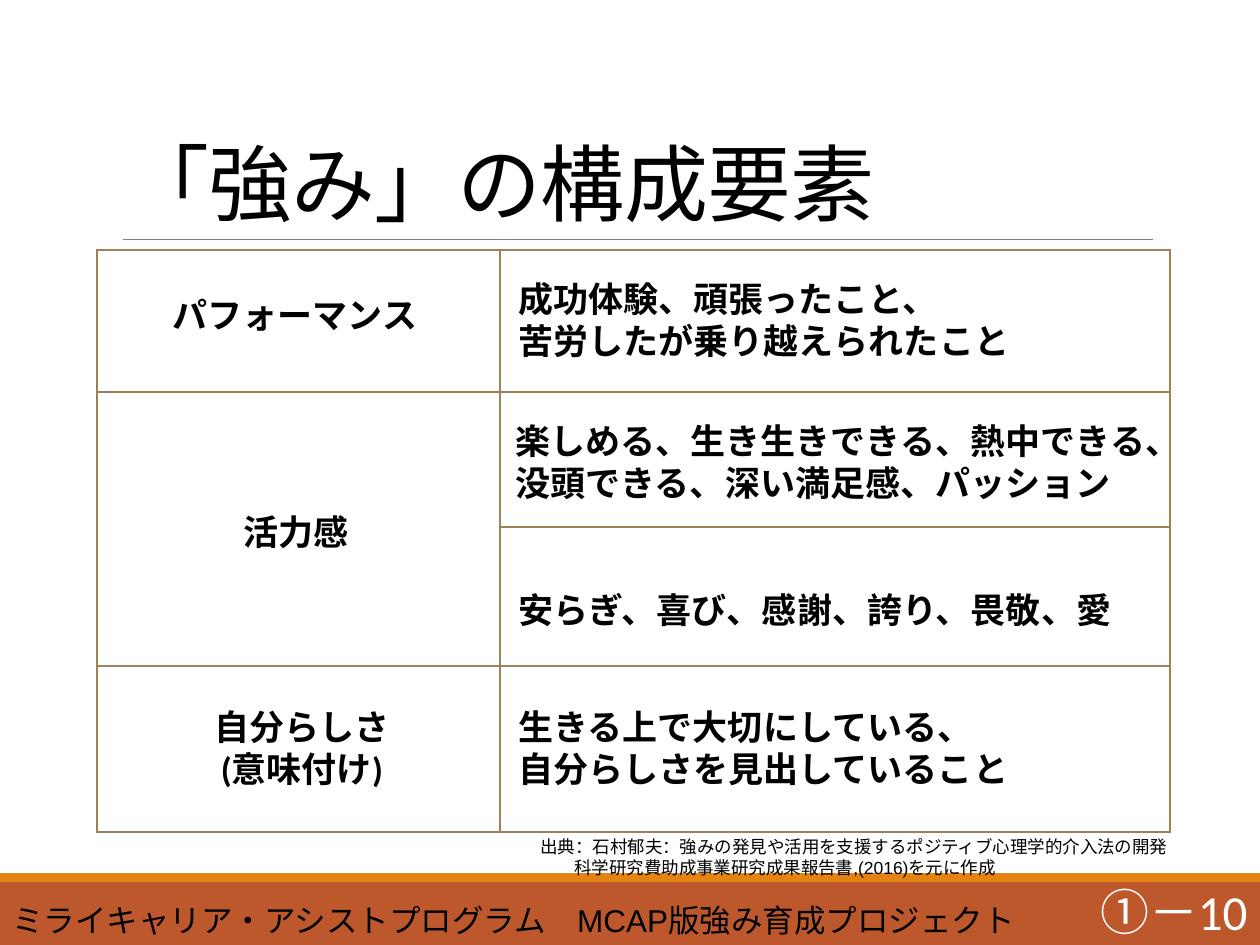
import dataclasses

import pptx
import pptx.dml.color
import pptx.enum.shapes
import pptx.enum.text
import pptx.oxml.ns
import pptx.util
from lxml import etree

RGBColor = pptx.dml.color.RGBColor
PP_ALIGN = pptx.enum.text.PP_ALIGN
MSO_ANCHOR = pptx.enum.text.MSO_ANCHOR
qn = pptx.oxml.ns.qn

BLACK = RGBColor(0x00, 0x00, 0x00)
WHITE = RGBColor(0xFF, 0xFF, 0xFF)
RUST = RGBColor(0xBD, 0x58, 0x2C)
ORANGE = RGBColor(0xE4, 0x83, 0x12)
GRAY = RGBColor(0x80, 0x80, 0x80)
BORDER = RGBColor(0x9B, 0x83, 0x57)

PX_PER_INCH = 126
COLUMNS = [403, 670]
ROWS = [142, 135, 139, 166]


@dataclasses.dataclass
class Label:
    x: int
    y: int
    w: int
    h: int
    lines: list[str]
    size: int = 20
    font: str = "Calibri"
    color: RGBColor = BLACK
    bold: bool = True
    align: PP_ALIGN = PP_ALIGN.LEFT
    anchor: MSO_ANCHOR = MSO_ANCHOR.TOP


LABELS = [
    Label(1058, 877, 202, 68, ["①－10"], size=28, color=WHITE, bold=False,
          align=PP_ALIGN.RIGHT, anchor=MSO_ANCHOR.MIDDLE),
    Label(147, 287, 296, 55, ["パフォーマンス"], align=PP_ALIGN.CENTER),
    Label(190, 504, 212, 55, ["活力感"], align=PP_ALIGN.CENTER),
    Label(503, 413, 673, 97,
          ["楽しめる、生き生きできる、熱中できる、没頭できる、深い満足感、パッション"]),
    Label(506, 582, 667, 55, ["安らぎ、喜び、感謝、誇り、畏敬、愛"]),
    Label(154, 699, 296, 97, ["自分らしさ", "(意味付け)"], align=PP_ALIGN.CENTER),
    Label(506, 699, 620, 97, ["生きる上で大切にしている、", "自分らしさを見出していること"]),
    Label(506, 271, 549, 97, ["成功体験、頑張ったこと、", "苦労したが乗り越えられたこと"]),
    Label(0, 895, 1052, 50, ["ミライキャリア・アシストプログラム　MCAP版強み育成プロジェクト"],
          size=18, font="Arial", bold=False),
]
CITATION = Label(
    528, 830, 672, 93,
    ["出典：石村郁夫：強みの発見や活用を支援するポジティブ心理学的介入法の開発",
     "科学研究費助成事業研究成果報告書,(2016)を元に作成"],
    size=10, font="Arial", bold=False)


def px(n: int) -> pptx.util.Emu:
    return pptx.util.Emu(round(n * 914400 / PX_PER_INCH))


def format_run(r, size: int, font: str, color: RGBColor, bold: bool) -> None:
    r.font.size = pptx.util.Pt(size)
    r.font.name = font
    r.font.color.rgb = color
    r.font.bold = bold


def add_band(s, y: int, h: int, color: RGBColor) -> None:
    sp = s.shapes.add_shape(pptx.enum.shapes.MSO_SHAPE.RECTANGLE, 0, px(y), px(1260), px(h))
    sp.shadow.inherit = False
    sp.fill.solid()
    sp.fill.fore_color.rgb = color
    sp.line.fill.background()


def add_rule(s, x1: int, x2: int, y: int) -> None:
    line = s.shapes.add_connector(
        pptx.enum.shapes.MSO_CONNECTOR.STRAIGHT, px(x1), px(y), px(x2), px(y))
    line.line.color.rgb = GRAY
    line.line.width = pptx.util.Pt(0.5)
    etree.SubElement(line._element.spPr, qn("a:effectLst"))


def add_label(s, label: Label):
    sp = s.shapes.add_textbox(px(label.x), px(label.y), px(label.w), px(label.h))
    tf = sp.text_frame
    tf.word_wrap = True
    tf.vertical_anchor = label.anchor
    tf.text = "\n".join(label.lines)
    for p in tf.paragraphs:
        p.alignment = label.align
        for r in p.runs:
            format_run(r, label.size, label.font, label.color, label.bold)
    return sp


def set_borders(cell) -> None:
    tcPr = cell._tc.get_or_add_tcPr()
    for i, side in enumerate(("lnL", "lnR", "lnT", "lnB")):
        ln = etree.Element(qn(f"a:{side}"), w=str(pptx.util.Pt(1)))
        fill = etree.SubElement(ln, qn("a:solidFill"))
        etree.SubElement(fill, qn("a:srgbClr"), val=str(BORDER))
        tcPr.insert(i, ln)


def add_grid(s, x: int, y: int) -> None:
    frame = s.shapes.add_table(
        len(ROWS), len(COLUMNS), px(x), px(y), px(sum(COLUMNS)), px(sum(ROWS)))
    table = frame.table
    table.first_row = False
    table.horz_banding = False
    for column, width in zip(table.columns, COLUMNS):
        column.width = px(width)
    for row, height in zip(table.rows, ROWS):
        row.height = px(height)
    for cell in table.iter_cells():
        cell.fill.solid()
        cell.fill.fore_color.rgb = WHITE
        set_borders(cell)
    table.cell(1, 0).merge(table.cell(2, 0))


def set_title(s, text: str) -> None:
    sp = s.shapes.title
    sp.left, sp.top, sp.width, sp.height = px(113), px(39), px(1040), px(200)
    tf = sp.text_frame
    tf.text = text
    tf.word_wrap = True
    tf.auto_size = pptx.enum.text.MSO_AUTO_SIZE.NONE
    tf.vertical_anchor = MSO_ANCHOR.BOTTOM
    p = tf.paragraphs[0]
    p.alignment = PP_ALIGN.LEFT
    p.line_spacing = 0.85
    r = p.runs[0]
    format_run(r, 48, "Calibri", BLACK, False)
    r._r.get_or_add_rPr().set("spc", "-50")


def main() -> None:
    prs = pptx.Presentation()
    prs.slide_width, prs.slide_height = px(1260), px(945)
    s = prs.slides.add_slide(prs.slide_layouts.get_by_name("Title Only"))
    add_band(s, 882, 63, RUST)
    add_band(s, 873, 9, ORANGE)
    add_rule(s, 123, 1153, 239)
    set_title(s, "「強み」の構成要素")
    add_grid(s, 97, 250)
    for label in LABELS:
        add_label(s, label)
    citation = add_label(s, CITATION)
    second_line = citation.text_frame.paragraphs[1]
    second_line._p.get_or_add_pPr().set("marL", str(px(34)))
    prs.save("out.pptx")


if __name__ == "__main__":
    main()
